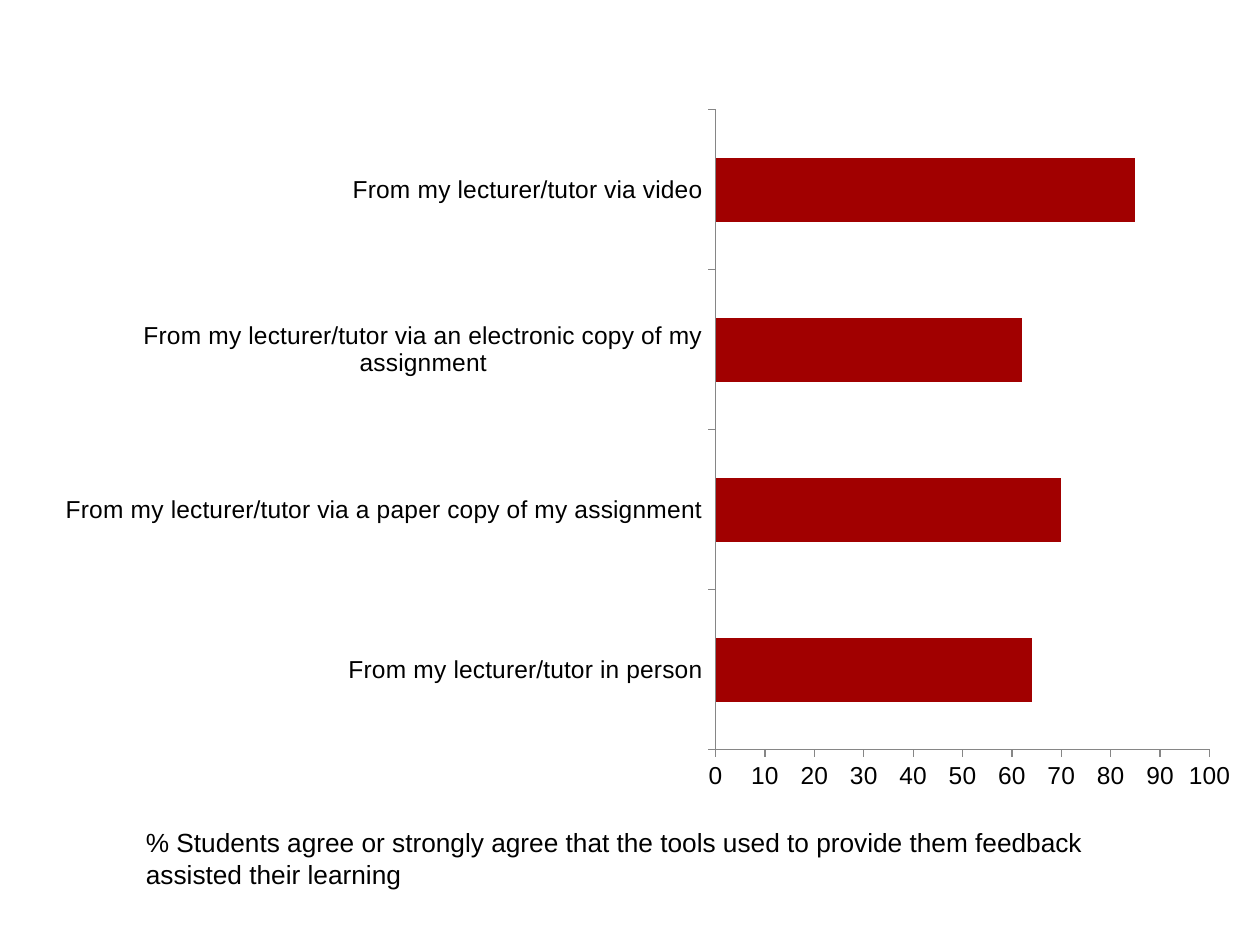
from dataclasses import dataclass

from lxml.etree import SubElement
from pptx import Presentation
from pptx.chart.data import CategoryChartData
from pptx.dml.color import RGBColor
from pptx.enum.chart import XL_CHART_TYPE as ChartType, XL_TICK_MARK as TickMark
from pptx.enum.text import MSO_AUTO_SIZE as AutoSize
from pptx.oxml import parse_xml
from pptx.oxml.ns import nsdecls, qn
from pptx.util import Inches, Pt

FEEDBACK = [
    ("From my lecturer/tutor in person", 64),
    ("From my lecturer/tutor via a paper copy of my assignment", 70),
    ("From my lecturer/tutor via an electronic copy of my assignment", 62),
    ("From my lecturer/tutor via video", 85),
]
CAPTION = (
    "% Students agree or strongly agree that the tools used to provide "
    "them feedback assisted their learning"
)
CHART_BOX = (0.34, 0.76, 9.63, 5.62)
CAPTION_BOX = (1.06, 6.51, 8.43, 0.61)
PLOT_AREA = {"x": 5.68, "y": 0.87, "w": 3.92, "h": 5.08}


@dataclass(frozen=True)
class Theme:
    font: str = "Arial"
    text: RGBColor = RGBColor(0, 0, 0)
    bar: RGBColor = RGBColor(0xA1, 0, 0)
    axis: RGBColor = RGBColor(0x86, 0x86, 0x86)
    label_size: Pt = Pt(14)
    caption_size: Pt = Pt(15)


THEME = Theme()


def style_font(font, size):
    font.name, font.size, font.color.rgb = THEME.font, size, THEME.text


def place_plot(chart):
    left, top, width, height = CHART_BOX
    shares = {
        "x": (PLOT_AREA["x"] - left) / width,
        "y": (PLOT_AREA["y"] - top) / height,
        "w": PLOT_AREA["w"] / width,
        "h": PLOT_AREA["h"] / height,
    }
    plot_area = chart.element.find(".//" + qn("c:plotArea"))
    for old_layout in plot_area.findall(qn("c:layout")):
        plot_area.remove(old_layout)
    layout = parse_xml(f"<c:layout {nsdecls('c')}/>")
    manual = SubElement(layout, qn("c:manualLayout"))
    settings = {"layoutTarget": "inner", "xMode": "edge", "yMode": "edge"}
    settings.update({side: f"{share:.4f}" for side, share in shares.items()})
    for tag, value in settings.items():
        SubElement(manual, qn(f"c:{tag}")).set("val", value)
    plot_area.insert(0, layout)


def add_feedback_chart(slide):
    data = CategoryChartData()
    categories, agreement = zip(*FEEDBACK)
    data.categories = categories
    data.add_series("Series 1", agreement)
    chart = slide.shapes.add_chart(
        ChartType.BAR_CLUSTERED, *map(Inches, CHART_BOX), data
    ).chart
    chart.has_legend = chart.has_title = False
    style_font(chart.font, THEME.label_size)

    bars = chart.plots[0]
    bars.vary_by_categories = False
    bars.gap_width = 150
    fill = bars.series[0].format.fill
    fill.solid()
    fill.fore_color.rgb = THEME.bar

    for axis in (chart.category_axis, chart.value_axis):
        axis.has_major_gridlines = False
        axis.major_tick_mark = TickMark.OUTSIDE
        axis.minor_tick_mark = TickMark.NONE
        axis.format.line.color.rgb = THEME.axis
        axis.format.line.width = Pt(0.75)
        style_font(axis.tick_labels.font, THEME.label_size)
    chart.value_axis.minimum_scale = 0
    chart.value_axis.maximum_scale = 100
    chart.value_axis.major_unit = 10
    place_plot(chart)


def add_caption(slide):
    frame = slide.shapes.add_textbox(*map(Inches, CAPTION_BOX)).text_frame
    frame.word_wrap = True
    frame.auto_size = AutoSize.SHAPE_TO_FIT_TEXT
    caption = frame.paragraphs[0]
    caption.text = CAPTION
    style_font(caption.font, THEME.caption_size)


def main():
    """Build the feedback tools slide."""
    deck = Presentation()
    deck.slide_width, deck.slide_height = Inches(10), Inches(7.5)
    slide = deck.slides.add_slide(deck.slide_layouts[6])
    add_feedback_chart(slide)
    add_caption(slide)
    deck.save("out.pptx")


if __name__ == "__main__":
    main()
